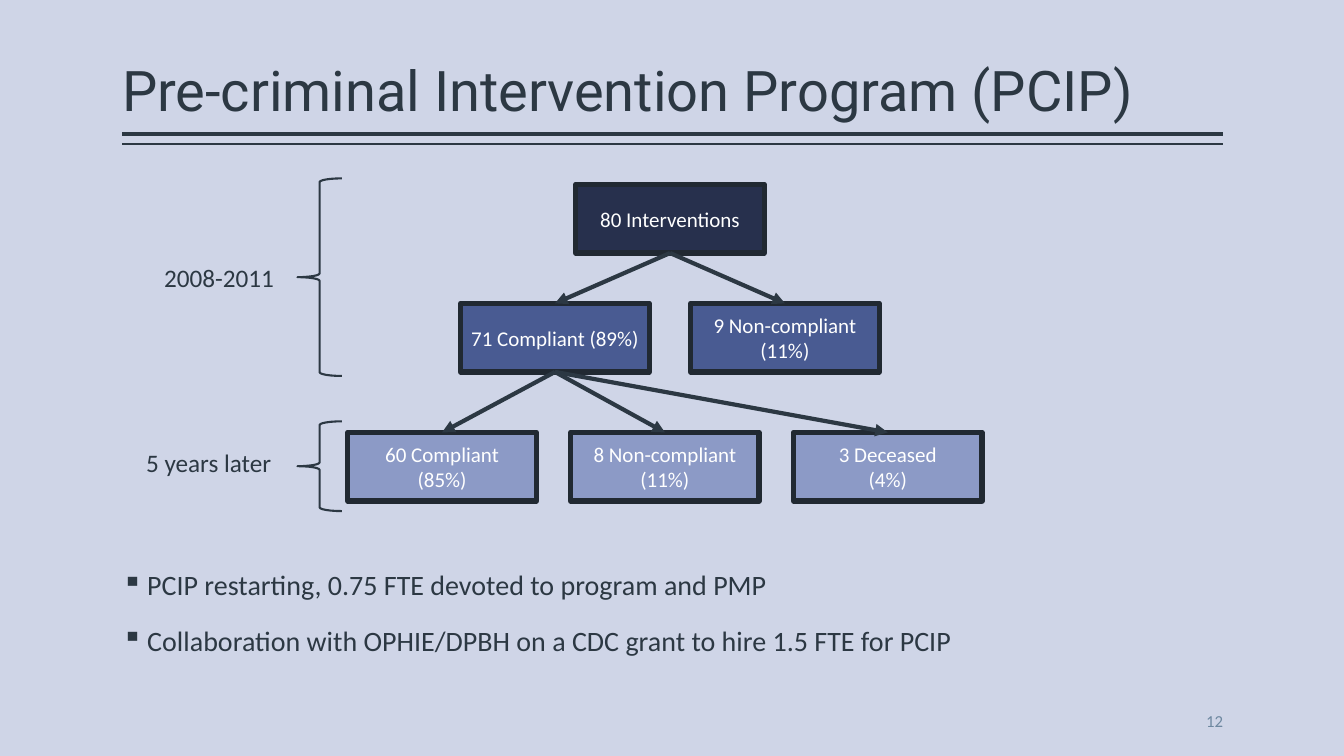
"""Build the Pre-criminal Intervention Program slide with its outcome tree."""
import dataclasses

import lxml.etree
import pptx
import pptx.dml.color
import pptx.enum.shapes
import pptx.enum.text
import pptx.oxml.ns
import pptx.util

ALIGN = pptx.enum.text.PP_ALIGN
ANCHOR = pptx.enum.text.MSO_ANCHOR
SHAPE = pptx.enum.shapes.MSO_SHAPE
WIDTH = pptx.util.Inches(13.33)
HEIGHT = pptx.util.Inches(7.5)
MARGIN_LEFT, MARGIN_RIGHT = 9.08, 91
BOX_WIDTH, BOX_HEIGHT = 14.03, 9.07


@dataclasses.dataclass(frozen=True)
class Theme:
    background: str = "CFD5E7"
    ink: str = "2C3843"
    border: str = "212932"
    muted: str = "6E88A0"
    white: str = "FFFFFF"
    levels: tuple[str, ...] = ("27304D", "495B92", "8C9AC6")
    heading_font: str = "Roboto"
    body_font: str = "Calibri"
    title_size: int = 40
    bullet_size: int = 20
    label_size: int = 18
    box_size: int = 15
    number_size: int = 12


THEME = Theme()


@dataclasses.dataclass(frozen=True)
class Area:
    """Percent shares of the slide's width and height."""
    left: float
    top: float
    width: float
    height: float

    def lengths(self) -> tuple[int, int, int, int]:
        return across(self.left), down(self.top), across(self.width), down(self.height)


@dataclasses.dataclass(frozen=True)
class TextStyle:
    size: int
    color: str = THEME.ink
    font: str = THEME.body_font
    align: ALIGN = ALIGN.LEFT
    anchor: ANCHOR = ANCHOR.TOP
    flush: bool = False
    line_spacing: float = 1.0
    space_before: int = 0
    bullet: str = ""


@dataclasses.dataclass(frozen=True)
class Level:
    left: float
    top: float
    step: float
    boxes: tuple[tuple[str, ...], ...]


@dataclasses.dataclass(frozen=True)
class Period:
    label: str
    label_area: Area
    brace_area: Area


@dataclasses.dataclass(frozen=True)
class Rule:
    top: float
    weight: float


RULES = (Rule(17.73, 3), Rule(19.07, 1))
LEVELS = (
    Level(42.84, 24.4, 0, (("80 Interventions",),)),
    Level(34.28, 40.13, 17.11, (("71 Compliant (89%)",), ("9 Non-compliant", "(11%)"))),
    Level(25.88, 57.2, 16.58, (("60 Compliant", "(85%)"), ("8 Non-compliant", "(11%)"),
                               ("3 Deceased", "(4%)"))),
)
PERIODS = (
    Period("2008-2011", Area(11.48, 34, 11.18, 5.33), Area(22.13, 23.6, 3.3, 26.13)),
    Period("5 years later", Area(10.13, 58.53, 14.18, 5.33), Area(22.13, 55.73, 3.3, 11.87)),
)
BULLETS = (
    "PCIP restarting, 0.75 FTE devoted to program and PMP",
    "Collaboration with OPHIE/DPBH on a CDC grant to hire 1.5 FTE for PCIP",
)


def across(share: float) -> int:
    return round(WIDTH * share / 100)


def down(share: float) -> int:
    return round(HEIGHT * share / 100)


def rgb(color: str) -> pptx.dml.color.RGBColor:
    return pptx.dml.color.RGBColor.from_string(color)


def add_child(parent, tag: str, **attributes: str) -> None:
    lxml.etree.SubElement(parent, pptx.oxml.ns.qn(tag), attributes)


def write(shape, lines: tuple[str, ...], style: TextStyle) -> None:
    frame = shape.text_frame
    frame.word_wrap = True
    frame.vertical_anchor = style.anchor
    if style.flush:
        frame.margin_left = frame.margin_right = 0
    frame.text = "\n".join(lines)
    for paragraph in frame.paragraphs:
        if style.bullet:
            properties = paragraph._p.get_or_add_pPr()
            indent = pptx.util.Inches(0.25)
            properties.set("marL", str(indent))
            properties.set("indent", str(-indent))
            add_child(properties, "a:buChar", char=style.bullet)
        paragraph.alignment = style.align
        paragraph.line_spacing = style.line_spacing
        paragraph.space_before = pptx.util.Pt(style.space_before)
        paragraph.font.size = pptx.util.Pt(style.size)
        paragraph.font.name = style.font
        paragraph.font.color.rgb = rgb(style.color)


def add_text(slide, area: Area, lines: tuple[str, ...], style: TextStyle) -> None:
    write(slide.shapes.add_textbox(*area.lengths()), lines, style)


def add_outline(slide, kind: SHAPE, area: Area, color: str, weight: float):
    shape = slide.shapes.add_shape(kind, *area.lengths())
    shape.shadow.inherit = False
    shape.fill.background()
    shape.line.color.rgb = rgb(color)
    shape.line.width = pptx.util.Pt(weight)
    return shape


def add_line(slide, left: float, right: float, top: float, weight: float):
    connector = slide.shapes.add_connector(
        pptx.enum.shapes.MSO_CONNECTOR.STRAIGHT,
        across(left), down(top), across(right), down(top))
    connector.line.color.rgb = rgb(THEME.ink)
    connector.line.width = pptx.util.Pt(weight)
    add_child(connector._element.spPr, "a:effectLst")
    return connector


def add_arrow(slide, parent, child) -> None:
    arrow = add_line(slide, 0, 0, 0, 3)
    arrow.begin_connect(parent, 2)
    arrow.end_connect(child, 0)
    add_child(arrow.line._get_or_add_ln(), "a:tailEnd", type="triangle")


def add_level(slide, level: Level, fill: str) -> list:
    style = TextStyle(THEME.box_size, THEME.white, align=ALIGN.CENTER, anchor=ANCHOR.MIDDLE)
    boxes = []
    for index, lines in enumerate(level.boxes):
        area = Area(level.left + index * level.step, level.top, BOX_WIDTH, BOX_HEIGHT)
        box = add_outline(slide, SHAPE.RECTANGLE, area, THEME.border, 3.78)
        box.fill.solid()
        box.fill.fore_color.rgb = rgb(fill)
        write(box, lines, style)
        boxes.append(box)
    return boxes


def main() -> None:
    presentation = pptx.Presentation()
    presentation.slide_width, presentation.slide_height = WIDTH, HEIGHT
    slide = presentation.slides.add_slide(presentation.slide_layouts[6])
    slide.background.fill.solid()
    slide.background.fill.fore_color.rgb = rgb(THEME.background)

    for rule in RULES:
        add_line(slide, MARGIN_LEFT, MARGIN_RIGHT, rule.top, rule.weight)
    content_width = MARGIN_RIGHT - MARGIN_LEFT
    add_text(slide, Area(MARGIN_LEFT, 1.07, content_width, 16),
             ("Pre-criminal Intervention Program (PCIP)",),
             TextStyle(THEME.title_size, font=THEME.heading_font, anchor=ANCHOR.BOTTOM,
                       flush=True, line_spacing=0.9))
    add_text(slide, Area(MARGIN_LEFT, 74.93, content_width, 14.67), BULLETS,
             TextStyle(THEME.bullet_size, flush=True, line_spacing=0.9,
                       space_before=18, bullet="▪"))
    add_text(slide, Area(MARGIN_RIGHT - 15, 92.67, 15, 5.33), ("12",),
             TextStyle(THEME.number_size, THEME.muted, align=ALIGN.RIGHT,
                       anchor=ANCHOR.MIDDLE, flush=True))

    tree = [add_level(slide, level, fill) for level, fill in zip(LEVELS, THEME.levels)]
    for parents, children in zip(tree, tree[1:]):
        for child in children:
            add_arrow(slide, parents[0], child)
    for period in PERIODS:
        add_text(slide, period.label_area, (period.label,), TextStyle(THEME.label_size))
        add_outline(slide, SHAPE.LEFT_BRACE, period.brace_area, THEME.ink, 1.5)
    presentation.save("out.pptx")


if __name__ == "__main__":
    main()
